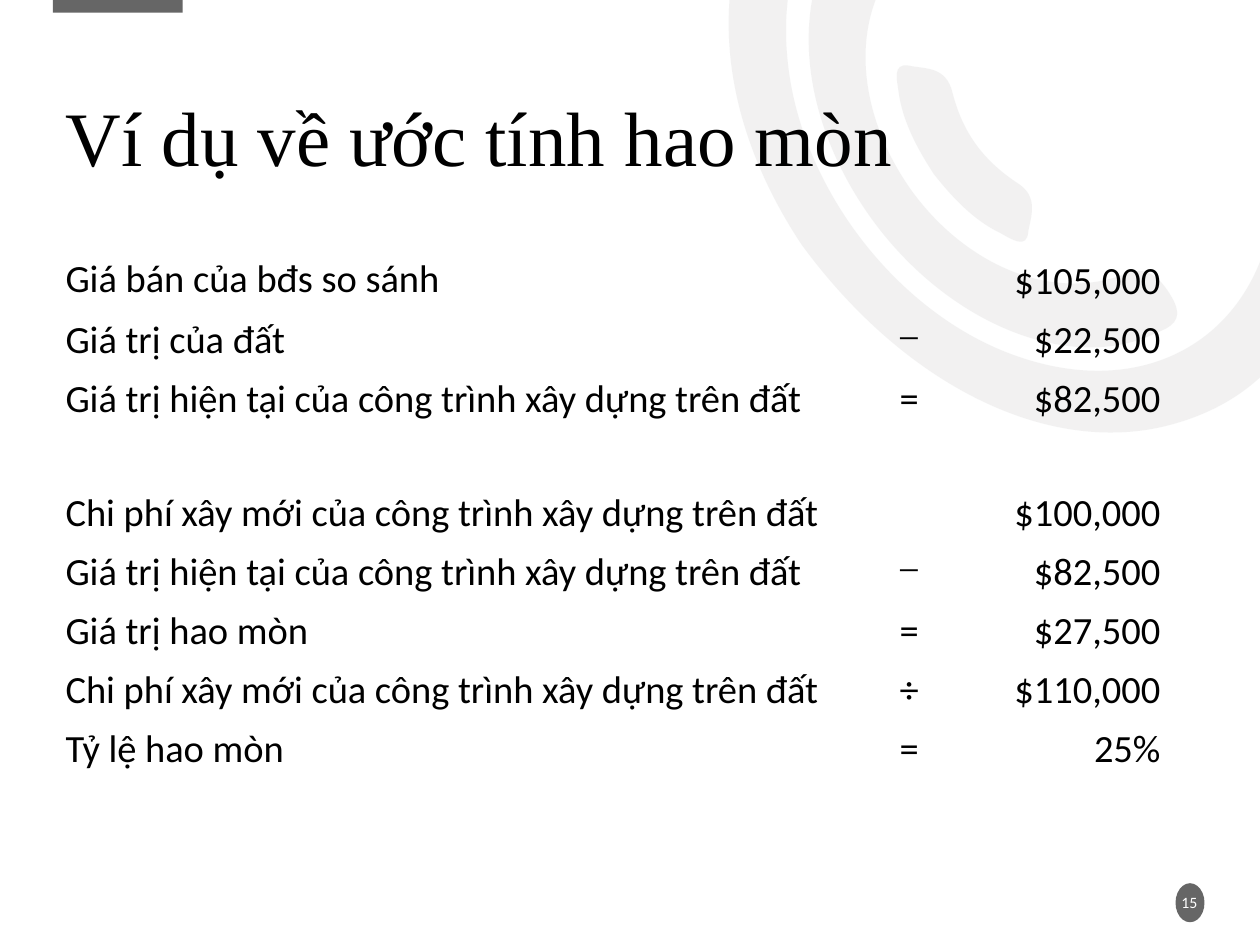
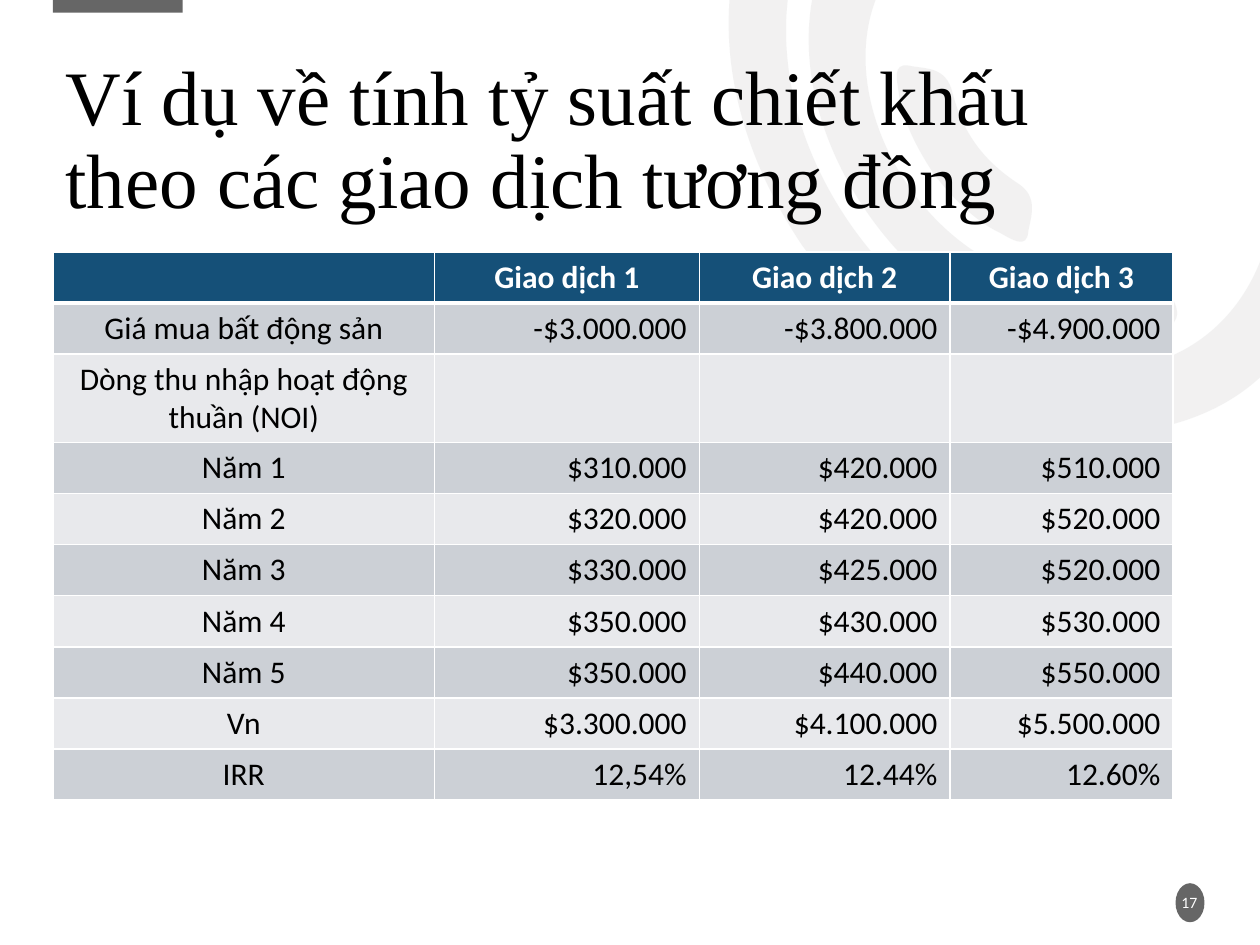
"""Build two slides on estimating depreciation and discount rates for property."""
from math import cos, radians, sin

from lxml.etree import SubElement
from pptx import Presentation
from pptx.dml.color import RGBColor
from pptx.enum.shapes import MSO_SHAPE
from pptx.enum.text import MSO_ANCHOR, MSO_AUTO_SIZE, PP_ALIGN
from pptx.oxml.ns import qn
from pptx.util import Inches, Pt

BLACK = RGBColor(0x00, 0x00, 0x00)
WHITE = RGBColor(0xFF, 0xFF, 0xFF)
GREY = RGBColor(0x66, 0x66, 0x66)
PALE_GREY = RGBColor(0xE7, 0xE6, 0xE6)
NAVY = RGBColor(0x15, 0x50, 0x78)
BANDS = (RGBColor(0xCC, 0xD0, 0xD6), RGBColor(0xE8, 0xE9, 0xEC))
TITLE_FONT, BODY_FONT = "Times New Roman", "Calibri"
NO_TABLE_STYLE = "{2D5ABB26-0587-4C30-8999-92F81FD0307C}"
LEFT, CONTENT_WIDTH, TABLE_TOP = 0.42, 8.89, 2
ROW_HEIGHT, BLANK_ROW_HEIGHT = Pt(29.2), Inches(0.44)
HANDSET_ROTATION = 144.2

DEPRECIATION = {
    "title": "Ví dụ về ước tính hao mòn",
    "number": "15",
    "columns": (6.49, 0.61, 1.79),
    "rows": [
        ("Giá bán của bđs so sánh", "", "$105,000"),
        ("Giá trị của đất", "−", "$22,500"),
        ("Giá trị hiện tại của công trình xây dựng trên đất", "=", "$82,500"),
        ("", "", ""),
        ("Chi phí xây mới của công trình xây dựng trên đất", "", "$100,000"),
        ("Giá trị hiện tại của công trình xây dựng trên đất", "−", "$82,500"),
        ("Giá trị hao mòn", "=", "$27,500"),
        ("Chi phí xây mới của công trình xây dựng trên đất", "÷", "$110,000"),
        ("Tỷ lệ hao mòn", "=", "25%"),
    ],
}
DISCOUNT_RATE = {
    "title": "Ví dụ về tính tỷ suất chiết khấu theo các giao dịch tương đồng",
    "number": "17",
    "columns": (3.03, 2.1, 1.99, 1.77),
    "rows": [
        ("", "Giao dịch 1", "Giao dịch 2", "Giao dịch 3"),
        ("Giá mua bất động sản", "-$3.000.000", "-$3.800.000", "-$4.900.000"),
        ("Dòng thu nhập hoạt động thuần (NOI)", "", "", ""),
        ("Năm 1", "$310.000", "$420.000", "$510.000"),
        ("Năm 2", "$320.000", "$420.000", "$520.000"),
        ("Năm 3", "$330.000", "$425.000", "$520.000"),
        ("Năm 4", "$350.000", "$430.000", "$530.000"),
        ("Năm 5", "$350.000", "$440.000", "$550.000"),
        ("Vn", "$3.300.000", "$4.100.000", "$5.500.000"),
        ("IRR", "12,54%", "12.44%", "12.60%"),
    ],
}
HANDSET_PARTS = [
    ((6.09, -2.02, 3.64, 6), (6.36, 1.94), [
        (5.83, 1.14, 5.62, 0.23, 5.92, -0.63), (6.23, -1.5, 6.9, -1.86, 7.84, -1.77),
        (7.96, -1.75, 8.1, -1.75, 8.2, -1.61), (8.33, -1.41, 8.22, -1.23, 7.97, -1.27),
        (6.88, -1.43, 6.13, -0.68, 6.25, 0.48), (6.35, 1.5, 7.14, 2.51, 8.08, 2.83),
        (9.06, 3.17, 9.9, 2.72, 10.09, 1.77), (10.09, 1.74, 10.11, 1.71, 10.11, 1.66),
        (10.12, 1.48, 10.2, 1.42, 10.39, 1.5), (10.6, 1.59, 10.57, 1.75, 10.54, 1.87),
        (10.42, 2.66, 10.02, 3.16, 9.33, 3.36), (8.38, 3.64, 7.21, 3.1, 6.36, 1.94)]),
    ((6.76, -0.87, 1.59, 4.26), (6.92, 1.74), [
        (6.32, 0.91, 6.25, -0.07, 6.75, -0.67), (6.83, -0.76, 6.91, -0.89, 7.07, -0.72),
        (7.22, -0.57, 7.25, -0.44, 7.12, -0.3), (6.74, 0.17, 6.8, 0.91, 7.24, 1.52),
        (7.68, 2.12, 8.37, 2.4, 8.94, 2.17), (9.1, 2.11, 9.2, 2.19, 9.3, 2.36),
        (9.41, 2.55, 9.28, 2.6, 9.18, 2.64), (8.51, 2.97, 7.53, 2.58, 6.92, 1.74)]),
    ((7.35, 0.3, 0.59, 1.83), (7.41, 1.38), [
        (7.28, 1.18, 7.16, 0.96, 7.13, 0.72), (7.12, 0.64, 7.08, 0.5, 7.21, 0.52),
        (7.34, 0.55, 7.51, 0.52, 7.56, 0.74), (7.64, 1.05, 7.8, 1.27, 8.07, 1.45),
        (8.25, 1.56, 8.18, 1.72, 8.16, 1.84), (8.15, 1.98, 8.03, 1.9, 7.94, 1.85),
        (7.73, 1.75, 7.56, 1.57, 7.41, 1.38)]),
]


def write_text(text_frame, text, size=18, font=BODY_FONT, color=BLACK, bold=False,
               align=PP_ALIGN.LEFT, line_spacing=1.0):
    paragraph = text_frame.paragraphs[0]
    paragraph.alignment = align
    paragraph.line_spacing = line_spacing
    run = paragraph.add_run()
    run.text = text
    run.font.size = Pt(size)
    run.font.name = font
    run.font.bold = bold
    run.font.color.rgb = color


def paint(shape, color):
    shape.shadow.inherit = False
    shape.fill.solid()
    shape.fill.fore_color.rgb = color
    shape.line.fill.background()
    return shape


def to_local(x, y, box):
    """Turn a point on the slide into one in the unrotated box."""
    left, top, width, height = box
    angle = radians(-HANDSET_ROTATION)
    across, down = x - left - width / 2, y - top - height / 2
    return (Inches(width / 2 + across * cos(angle) - down * sin(angle)),
            Inches(height / 2 + across * sin(angle) + down * cos(angle)))


def add_handset_part(shapes, box, start, curves):
    """Add a rotated outline and bend its straight segments into Bézier curves."""
    builder = shapes.build_freeform(*to_local(*start, box), scale=1.0)
    builder.add_line_segments([to_local(*curve[4:], box) for curve in curves], close=True)
    shape = paint(builder.convert_to_shape(), PALE_GREY)
    shape.left, shape.top, shape.width, shape.height = map(Inches, box)
    shape.rotation = HANDSET_ROTATION
    outline = shape.element.find(".//" + qn("a:path"))
    outline.set("w", str(shape.width))
    outline.set("h", str(shape.height))
    move, *segments, _ = outline
    start_x, start_y = to_local(*start, box)
    move[0].set("x", str(start_x))
    move[0].set("y", str(start_y))
    for segment, curve in zip(segments, curves):
        bend = outline.makeelement(qn("a:cubicBezTo"))
        for point in zip(curve[::2], curve[1::2]):
            x, y = to_local(*point, box)
            SubElement(bend, qn("a:pt"), x=str(x), y=str(y))
        outline.replace(segment, bend)
    SubElement(shape.element.find(".//" + qn("a:srgbClr")), qn("a:alpha"), val="53000")
    return shape


def set_up_layout(layout, shapes):
    """Place the title and move the shared decoration from shapes to the layout."""
    title, *unused = layout.placeholders
    for placeholder in unused:
        placeholder.element.getparent().remove(placeholder.element)
    title.left, title.top = Inches(LEFT), Inches(0.4)
    title.width, title.height = Inches(CONTENT_WIDTH), Inches(1.45)
    decoration = [add_handset_part(shapes, *part) for part in HANDSET_PARTS]
    for kind, box, rotation in ((MSO_SHAPE.RECTANGLE, (LEFT, -0.02, 1.03, 0.12), 180),
                                (MSO_SHAPE.OVAL, (9.33, 7.01, 0.23, 0.31), 0)):
        shape = paint(shapes.add_shape(kind, *map(Inches, box)), GREY)
        shape.rotation = rotation
        decoration.append(shape)
    for shape in decoration:
        title.element.addprevious(shape.element)


def add_title_and_number(slide, content):
    title_frame = slide.shapes.title.text_frame
    title_frame.vertical_anchor = MSO_ANCHOR.MIDDLE
    title_frame.auto_size = MSO_AUTO_SIZE.NONE
    write_text(title_frame, content["title"], size=44, font=TITLE_FONT, line_spacing=0.9)
    number_box = slide.shapes.add_textbox(*map(Inches, (9.32, 7.06, 0.24, 0.2)))
    number_frame = number_box.text_frame
    number_frame.word_wrap = True
    number_frame.vertical_anchor = MSO_ANCHOR.MIDDLE
    number_frame.margin_left = number_frame.margin_right = 0
    number_frame.margin_top = number_frame.margin_bottom = 0
    write_text(number_frame, content["number"], size=9, color=WHITE, align=PP_ALIGN.CENTER)


def add_plain_table(slide, content):
    widths, rows = content["columns"], content["rows"]
    frame = slide.shapes.add_table(
        len(rows), len(widths), Inches(LEFT), Inches(TABLE_TOP),
        Inches(sum(widths)), ROW_HEIGHT * len(rows))
    table = frame.table
    table.first_row = table.horz_banding = False
    frame.element.find(".//" + qn("a:tableStyleId")).text = NO_TABLE_STYLE
    for column, width in zip(table.columns, widths):
        column.width = Inches(width)
    for table_row, texts in zip(table.rows, rows):
        table_row.height = ROW_HEIGHT if any(texts) else BLANK_ROW_HEIGHT
    return table


def add_borders(cell, **points):
    properties = cell._tc.get_or_add_tcPr()
    for index, side in enumerate(("lnL", "lnR", "lnT", "lnB")):
        line = properties.makeelement(qn("a:" + side), w=str(Pt(points.get(side, 1))))
        fill = SubElement(line, qn("a:solidFill"))
        SubElement(fill, qn("a:srgbClr"), val=str(WHITE))
        properties.insert(index, line)


def fill_depreciation_table(slide, content):
    table = add_plain_table(slide, content)
    alignments = (PP_ALIGN.LEFT, PP_ALIGN.CENTER, PP_ALIGN.RIGHT)
    for row_index, row in enumerate(content["rows"]):
        for column_index, text in enumerate(row):
            cell = table.cell(row_index, column_index)
            cell.fill.background()
            if text:
                write_text(cell.text_frame, text, size=22, align=alignments[column_index],
                           font=TITLE_FONT if text == "−" else BODY_FONT,
                           line_spacing=0.9 if row_index == column_index == 0 else 1.0)


def fill_discount_table(slide, content):
    table = add_plain_table(slide, content)
    for row_index, row in enumerate(content["rows"]):
        is_header = row_index == 0
        for column_index, text in enumerate(row):
            cell = table.cell(row_index, column_index)
            cell.fill.solid()
            cell.fill.fore_color.rgb = NAVY if is_header else BANDS[(row_index - 1) % 2]
            add_borders(cell, lnB=3 if is_header else 1, lnT=3 if row_index == 1 else 1)
            if text:
                centred = is_header or column_index == 0
                write_text(cell.text_frame, text, bold=is_header,
                           color=WHITE if is_header else BLACK,
                           align=PP_ALIGN.CENTER if centred else PP_ALIGN.RIGHT)


def main():
    presentation = Presentation()
    presentation.slide_width, presentation.slide_height = Inches(10), Inches(7.5)
    layout = presentation.slide_layouts[5]
    slides = [presentation.slides.add_slide(layout) for _ in range(2)]
    set_up_layout(layout, slides[0].shapes)
    contents = (DEPRECIATION, DISCOUNT_RATE)
    fillers = (fill_depreciation_table, fill_discount_table)
    for slide, content, fill_table in zip(slides, contents, fillers):
        add_title_and_number(slide, content)
        fill_table(slide, content)
    presentation.save("out.pptx")


if __name__ == "__main__":
    main()
